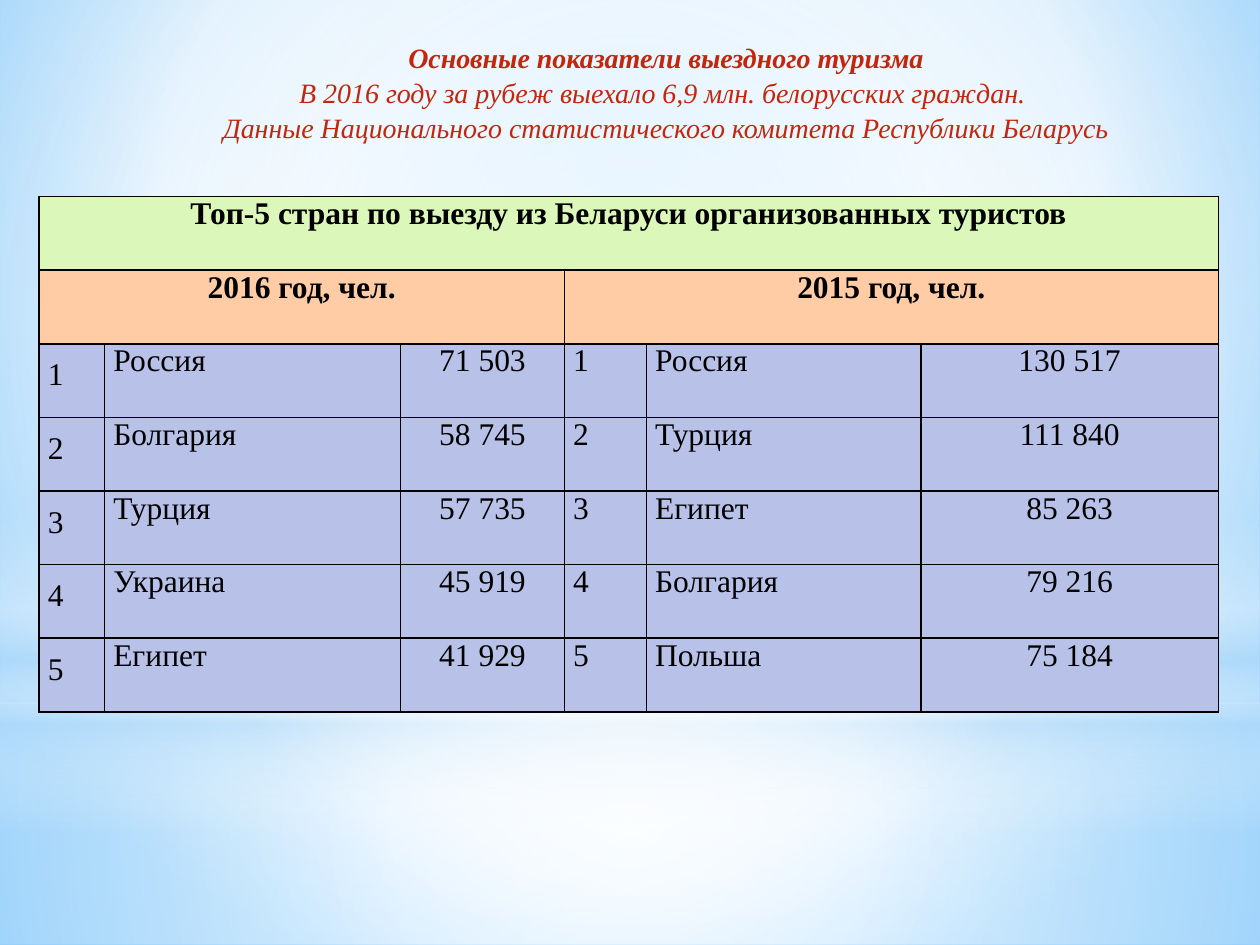
from lxml import etree
from pptx import Presentation
from pptx.dml.color import RGBColor as RGB
from pptx.enum.shapes import MSO_SHAPE as SHAPE
from pptx.enum.text import MSO_ANCHOR as ANCHOR, PP_ALIGN as ALIGN
from pptx.oxml.ns import qn
from pptx.util import Inches, Pt

FONT = "Times New Roman"
COLORS = {
    "sky": "9ED5FF", "deep": "5BB9FF", "white": "FFFFFF", "haze": "B4DCFA",
    "title": "C3260C", "text": "000000",
    "top": "DCF7BA", "year": "FFCCA6", "body": "B8C2E9",
}


def shade(item, stops, focus=None):
    """Fill with a gradient: circular around focus, else top to bottom."""
    item.fill.solid()
    solid = item_xml(item).find(".//" + qn("a:solidFill"))
    grad = etree.Element(qn("a:gradFill"), rotWithShape="1")
    row = etree.SubElement(grad, qn("a:gsLst"))
    for pos, name, alpha in stops:
        stop = etree.SubElement(row, qn("a:gs"), pos=str(pos * 1000))
        color = etree.SubElement(stop, qn("a:srgbClr"), val=COLORS[name])
        if alpha < 100:
            etree.SubElement(color, qn("a:alpha"), val=str(alpha * 1000))
    if focus:
        way = etree.SubElement(grad, qn("a:path"), {"path": "circle"})
        sides = {side: str(part * 1000) for side, part in zip("ltrb", focus)}
        etree.SubElement(way, qn("a:fillToRect"), sides)
    else:
        etree.SubElement(grad, qn("a:lin"), ang="5400000", scaled="0")
    solid.getparent().replace(solid, grad)


def item_xml(item):
    return slide.element if item is slide.background else item.element


deck = Presentation()
deck.slide_width, deck.slide_height = Inches(10), Inches(7.5)
slide = deck.slides.add_slide(deck.slide_layouts[6])

# Background and its soft light layers
shade(slide.background,
      [(0, "sky", 100), (60, "white", 100), (100, "deep", 100)],
      (20, 10, 20, 60))

MID = (50, 50, 50, 50)
layers = [
    (SHAPE.RECTANGLE, 5.58, 1.92, MID,
     [(0, "white", 91), (37, "white", 76), (100, "haze", 79)]),
    (SHAPE.RECTANGLE, 0, 5.58, MID,
     [(0, "white", 89), (48, "white", 62), (100, "haze", 79)]),
    (SHAPE.RECTANGLE, 4.12, 2.5, None,
     [(0, "white", 0), (29, "white", 30), (45, "haze", 40),
      (55, "white", 26), (65, "haze", 60), (100, "white", 0)]),
    (SHAPE.OVAL, 1.75, 5.58, MID, [(0, "white", 100), (56, "white", 0)]),
]
for kind, top, height, focus, stops in layers:
    layer = slide.shapes.add_shape(
        kind, 0, Inches(top), Inches(10), Inches(height))
    layer.shadow.inherit = False
    layer.line.fill.background()
    shade(layer, stops, focus)

# Title
lines = [
    "Основные показатели выездного туризма",
    "В 2016 году за рубеж выехало 6,9 млн. белорусских граждан. ",
    "Данные Национального статистического комитета Республики Беларусь",
]
box = slide.shapes.add_textbox(
    Inches(1.13), Inches(0.27), Inches(7.82), Inches(0.91))
frame = box.text_frame
frame.word_wrap = False
frame.vertical_anchor = ANCHOR.MIDDLE
frame.text = "\n".join(lines)
for i, para in enumerate(frame.paragraphs):
    para.alignment = ALIGN.CENTER
    para.line_spacing = 1.05
    para.font.name, para.font.size = FONT, Pt(16)
    para.font.bold, para.font.italic = i == 0, True
    para.font.color.rgb = RGB.from_string(COLORS["title"])
    para._p.get_or_add_pPr().set("indent", str(Inches(0.49)))

# Table of top countries
rows = [
    ["Топ-5 стран по выезду из Беларуси организованных туристов"] + [""] * 5,
    ["2016 год, чел.", "", "", "2015 год, чел.", "", ""],
    ["1", "Россия", "71 503", "1", "Россия", "130 517"],
    ["2", "Болгария", "58 745", "2", "Турция", "111 840"],
    ["3", "Турция", "57 735", "3", "Египет", "85 263"],
    ["4", "Украина", "45 919", "4", "Болгария", "79 216"],
    ["5", "Египет", "41 929", "5", "Польша", "75 184"],
]
widths = [0.52, 2.35, 1.3, 0.65, 2.18, 2.36]
table = slide.shapes.add_table(
    len(rows), len(widths), Inches(0.31), Inches(1.56),
    Inches(9.37), Inches(4.09)).table
table.first_row = table.horz_banding = False
for col, width in zip(table.columns, widths):
    col.width = Inches(width)

for r, row in enumerate(rows):
    head = r < 2
    tint = ("top", "year")[r] if head else "body"
    for c, text in enumerate(row):
        cell = table.cell(r, c)
        cell.margin_left = cell.margin_right = Inches(0.07)
        cell.margin_top = cell.margin_bottom = 0
        cell.text = text
        para = cell.text_frame.paragraphs[0]
        para.alignment = ALIGN.CENTER if head or c in (2, 5) else ALIGN.LEFT
        para.font.name, para.font.size = FONT, Pt(18)
        para.font.bold = head
        para.font.color.rgb = RGB.from_string(COLORS["text"])
        # The first rank column sits one line lower
        if c == 0 and not head:
            cell.margin_top = Pt(14)
            para.line_spacing = Pt(14)
        # Borders come before the fill
        props = cell._tc.get_or_add_tcPr()
        for side in "LRTB":
            edge = etree.SubElement(props, qn("a:ln" + side), w=str(Pt(1)))
            ink = etree.SubElement(edge, qn("a:solidFill"))
            etree.SubElement(ink, qn("a:srgbClr"), val=COLORS["text"])
        cell.fill.solid()
        cell.fill.fore_color.rgb = RGB.from_string(COLORS[tint])

for r, first, last in [(0, 0, 5), (1, 0, 2), (1, 3, 5)]:
    table.cell(r, first).merge(table.cell(r, last))

deck.save("out.pptx")
